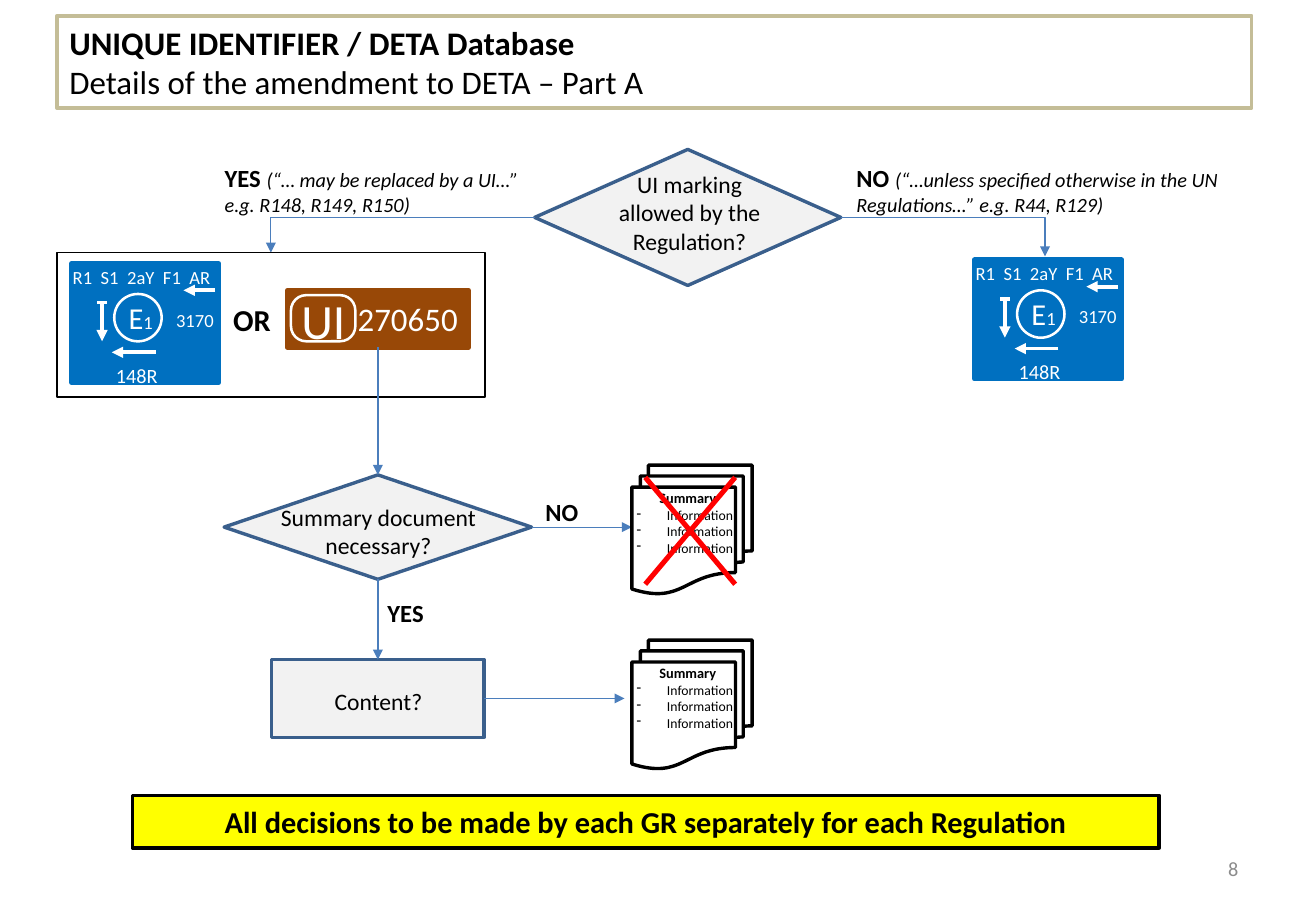
from lxml.etree import SubElement as Sub
from pptx import Presentation
from pptx.dml.color import RGBColor as RGB
from pptx.enum.shapes import MSO_CONNECTOR as Link, MSO_SHAPE as Form
from pptx.enum.text import MSO_ANCHOR as Anchor, MSO_AUTO_SIZE as Fit, PP_ALIGN as Align
from pptx.oxml.ns import qn
from pptx.util import Inches, Pt

BLACK = RGB(0x00, 0x00, 0x00)
WHITE = RGB(0xFF, 0xFF, 0xFF)
GRAY = RGB(0x8C, 0x8C, 0x8C)
PALE = RGB(0xF2, 0xF2, 0xF2)
NAVY = RGB(0x3A, 0x5F, 0x8C)
STEEL = RGB(0x4B, 0x7E, 0xBC)
BLUE = RGB(0x00, 0x70, 0xC0)
BROWN = RGB(0x98, 0x48, 0x07)
TAN = RGB(0xC4, 0xBD, 0x97)
YELLOW = RGB(0xFF, 0xFF, 0x00)
RED = RGB(0xFF, 0x00, 0x00)
AXIS = 3.11
BOLD = {"bold": True}


def write(shape, *rows, size=14, color=BLACK, align=Align.LEFT, anchor=Anchor.TOP,
          wrap=True, lead=None, bold=False):
    """Fill a shape with paragraphs, each a string or a list of (text, format) runs."""
    frame = shape.text_frame
    frame.auto_size = Fit.NONE
    frame.word_wrap = wrap
    frame.vertical_anchor = anchor
    for i, row in enumerate(rows):
        para = frame.add_paragraph() if i else frame.paragraphs[0]
        para.alignment = align
        if lead:
            para.line_spacing = Pt(lead)
        for words, own in [(row, {})] if isinstance(row, str) else row:
            run = para.add_run()
            run.text = words
            font = run.font
            font.name = "Calibri"
            font.size = Pt(own.get("size", size))
            font.bold = own.get("bold", bold)
            font.italic = own.get("italic", False)
            font.color.rgb = color
            if "gap" in own:
                run._r.get_or_add_rPr().set("spc", str(own["gap"]))
    return frame


def label(draw, box, *rows, **look):
    """Add a text box with formatted text."""
    return write(draw.add_textbox(*map(Inches, box)), *rows, **look)


def block(draw, form, box, fill, line, width):
    """Add a preset shape with its fill and outline."""
    shape = draw.add_shape(form, *map(Inches, box))
    shape.shadow.inherit = False
    if fill is None:
        shape.fill.background()
    else:
        shape.fill.solid()
        shape.fill.fore_color.rgb = fill
    shape.line.color.rgb = line
    shape.line.width = Pt(width)
    return shape


def wire(draw, ends, color=STEEL, width=0.75, head=True, bent=False):
    """Add a straight or once-bent line, with an arrowhead if wanted."""
    kind = Link.ELBOW if bent else Link.STRAIGHT
    line = draw.add_connector(kind, *map(Inches, ends))
    line.line.color.rgb = color
    line.line.width = Pt(width)
    props = line._element.spPr
    if bent:
        props.find(qn("a:prstGeom")).set("prst", "bentConnector2")
    if head:
        Sub(props.find(qn("a:ln")), qn("a:tailEnd"), type="triangle")
    Sub(props, qn("a:effectLst"))
    return line


def header(slide, box):
    """Format the title in its frame."""
    title = slide.shapes.title
    title.left, title.top, title.width, title.height = map(Inches, box)
    title.line.color.rgb = TAN
    title.line.width = Pt(2.25)
    write(title, [("UNIQUE IDENTIFIER / DETA Database", BOLD)],
          "Details of the amendment to DETA – Part A", size=19.5, anchor=Anchor.MIDDLE)


def mark(shapes, x, y):
    """Draw the full approval mark with its corner at x, y."""
    draw = shapes.add_group_shape().shapes
    block(draw, Form.RECTANGLE, (x, y, 1.21, 0.98), BLUE, BLUE, 3)
    codes = [("R1", {})]
    for code in ("S1", "2aY", "F1", "AR"):
        codes += [(" ", {"gap": 250}), (code, {})]
    label(draw, (x - 0.16, y - 0.03, 1.47, 0.29), codes, size=11, color=WHITE,
          align=Align.CENTER)
    label(draw, (x + 0.37, y + 0.24, 0.46, 0.4), [("E", {}), ("1", {"size": 11})],
          size=18, color=WHITE)
    block(draw, Form.OVAL, (x + 0.35, y + 0.25, 0.39, 0.39), None, WHITE, 1.5)
    label(draw, (x + 0.18, y + 0.63, 0.71, 0.4), "148R", size=12, color=WHITE,
          align=Align.CENTER, lead=24.4)
    for a, b, c, d, head in ((0.25, 0.32, 0.25, 0.64, True), (1.18, 0.22, 0.92, 0.22, True),
                             (0.21, 0.32, 0.29, 0.32, False), (0.69, 0.73, 0.33, 0.73, True)):
        wire(draw, (x + a, y + b, x + c, y + d), WHITE, 2.25, head)
    label(draw, (x + 0.76, y + 0.32, 0.52, 0.29), "3170", size=11, color=WHITE, wrap=False)


def plate(shapes, x, y):
    """Draw the unique identifier plate and return its base."""
    draw = shapes.add_group_shape().shapes
    base = block(draw, Form.RECTANGLE, (x, y, 1.49, 0.47), BROWN, BROWN, 3)
    ring = block(draw, Form.ROUNDED_RECTANGLE, (x + 0.03, y + 0.04, 0.53, 0.38),
                 BROWN, WHITE, 1.5)
    ring.adjustments[0] = 0.33
    label(draw, (x - 0.03, y - 0.05, 0.65, 0.59), "UI", size=29.2, color=WHITE,
          align=Align.CENTER)
    label(draw, (x + 0.48, y + 0.02, 1.03, 0.43), "270650", size=19.5, color=WHITE)
    return base


def paper(shapes, x, y):
    """Draw a stack of summary pages."""
    draw = shapes.add_group_shape().shapes
    block(draw, Form.FLOWCHART_MULTIDOCUMENT, (x, y, 0.99, 1.06), WHITE, BLACK, 2)
    frame = label(draw, (x - 0.06, y + 0.15, 1.04, 0.65),
                  [("Summary", {"bold": True, "size": 8.5})], *["Information"] * 3, size=8.1)
    frame.paragraphs[0].alignment = Align.CENTER
    for para in frame.paragraphs[1:]:
        props = para._p.get_or_add_pPr()
        props.set("marL", str(Inches(0.25)))
        props.set("indent", str(Inches(-0.25)))
        Sub(props, qn("a:buChar"), char="-")


def node(draw, form, box, words, area):
    """Draw a flow step with its caption."""
    shape = block(draw, form, box, PALE, NAVY, 2)
    label(draw, area, words, align=Align.CENTER)
    return shape


def choice(draw, x, y):
    """Draw the marking question and its two branches around the diamond at x, y."""
    node(draw, Form.FLOWCHART_DECISION, (x, y, 2.52, 1.12),
         "UI marking allowed by the Regulation?", (x + 0.53, y + 0.12, 1.49, 0.81))
    mid = y + 0.56
    wire(draw, (x + 2.52, mid, x + 4.2, mid + 0.32), bent=True)
    wire(draw, (x, mid, x - 2.17, mid + 0.29), bent=True)
    note = {"size": 12, "italic": True}
    for left, width, key, quote in (
            (x - 2.65, 2.79, "YES ", "(“… may be replaced by a UI…” e.g. R148, R149, R150)"),
            (x + 2.55, 3.19, "NO ",
             "(“…unless specified otherwise in the UN Regulations…” e.g. R44, R129)")):
        label(draw, (left, y + 0.06, width, 0.55), [(key, BOLD), (quote, note)], size=14.6)


def option(draw, x, y):
    """Draw the frame that offers the mark or the plate, and return the plate."""
    mark(draw, x + 0.12, y + 0.09)
    label(draw, (x + 1.35, y + 0.35, 0.51, 0.4), "OR", size=18, bold=True, wrap=False)
    base = plate(draw, AXIS - 0.745, y + 0.31)
    block(draw, Form.RECTANGLE, (x, y, 3.52, 1.19), None, BLACK, 1)
    return base


def flow(draw, base, y):
    """Draw the summary steps below the plate, from y down."""
    ask = node(draw, Form.FLOWCHART_DECISION, (AXIS - 1.265, y, 2.53, 0.86),
               "Summary document necessary?", (AXIS - 1.03, y + 0.18, 2.07, 0.57))
    step = node(draw, Form.RECTANGLE, (AXIS - 0.875, y + 1.52, 1.75, 0.64),
                "Content?", (AXIS - 1.03, y + 1.7, 2.07, 0.34))
    for top, low in ((base, ask), (ask, step)):
        line = wire(draw, (AXIS, y, AXIS, y + 1))
        line.begin_connect(top, 2)
        line.end_connect(low, 0)
    for start, right, drop in ((ask, 5.2, 0.43), (step, 5.14, 1.84)):
        line = wire(draw, (4, y + drop, right, y + drop))
        line.begin_connect(start, 3)
    label(draw, (4.39, y + 0.13, 0.59, 0.35), "NO", size=14.6, bold=True)
    label(draw, (AXIS - 0.02, y + 0.96, 0.57, 0.35), "YES", size=14.6, bold=True)
    for top in (y - 0.08, y + 1.36):
        paper(draw, 5.2, top)
    for a, b in ((0.9, 0.02), (0.02, 0.9)):
        wire(draw, (5.31, y + a, 6.05, y + b), RED, 3, False)


def footer(draw, box):
    """Draw the closing banner and the page number."""
    bar = block(draw, Form.RECTANGLE, box, YELLOW, BLACK, 2.25)
    write(bar, "All decisions to be made by each GR separately for each Regulation",
          size=18, bold=True, align=Align.CENTER, anchor=Anchor.MIDDLE)
    label(draw, (7.76, 6.95, 2.53, 0.4), "8", size=12, color=GRAY,
          align=Align.RIGHT, anchor=Anchor.MIDDLE)


def main():
    """Build and save the slide."""
    deck = Presentation()
    deck.slide_width, deck.slide_height = Inches(10.83), Inches(7.5)
    slide = deck.slides.add_slide(deck.slide_layouts[5])
    draw = slide.shapes
    header(slide, (0.47, 0.13, 9.83, 0.76))
    choice(draw, 4.4, 1.23)
    base = option(draw, 0.47, 2.08)
    mark(draw, 8.02, 2.14)
    flow(draw, base, 3.91)
    footer(draw, (1.09, 6.55, 8.45, 0.43))
    deck.save("out.pptx")


if __name__ == "__main__":
    main()
